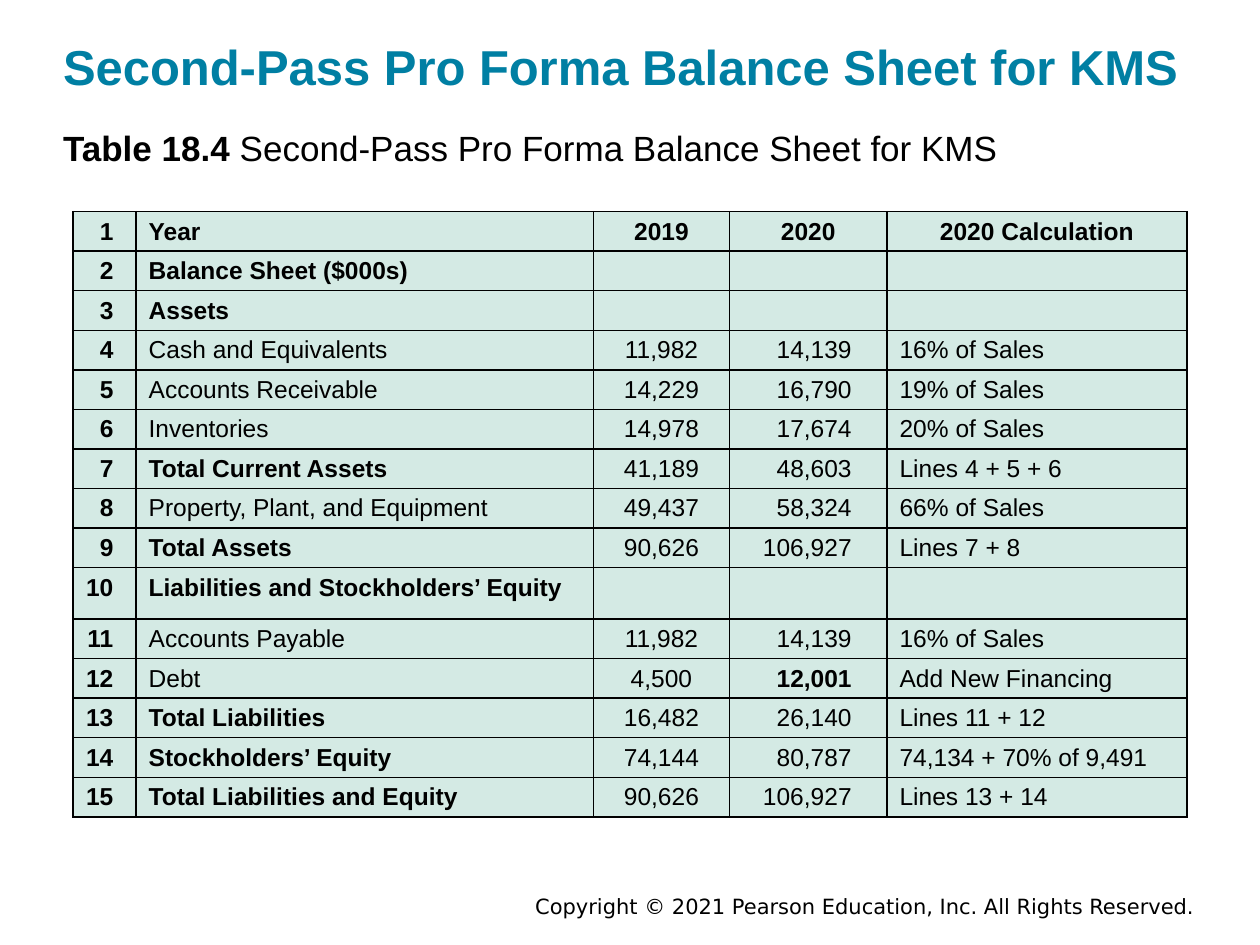
from lxml import etree
from pptx import Presentation
from pptx.dml.color import RGBColor
from pptx.enum.text import MSO_ANCHOR, PP_ALIGN
from pptx.oxml.ns import qn
from pptx.util import Inches, Pt

LEFT, MID, RIGHT = PP_ALIGN.LEFT, PP_ALIGN.CENTER, PP_ALIGN.RIGHT
MIDDLE, TOP = MSO_ANCHOR.MIDDLE, MSO_ANCHOR.TOP
HUES = {"title": "007FA3", "text": "000000", "cell": "D4EAE4", "line": "000000"}


def style(para, size, bold=False, hue="text", align=LEFT, face="Arial"):
    para.alignment = align
    font = para.font
    font.name, font.size, font.bold = face, Pt(size), bold
    font.color.rgb = RGBColor.from_string(HUES[hue])


def place(shape, left, top, width, height, anchor):
    shape.left, shape.top = Inches(left), Inches(top)
    shape.width, shape.height = Inches(width), Inches(height)
    frame = shape.text_frame
    frame.margin_left = frame.margin_right = 0
    frame.margin_top = frame.margin_bottom = 0
    frame.vertical_anchor = anchor
    frame.word_wrap = True
    return frame.paragraphs[0]


prs = Presentation()
prs.slide_width, prs.slide_height = Inches(10), Inches(7.5)
slide = prs.slides.add_slide(prs.slide_layouts[1])
title, body = slide.placeholders

# Title
para = place(title, 0.5, 0.27, 9, 0.51, MIDDLE)
para.text = "Second-Pass Pro Forma Balance Sheet for KMS"
style(para, 28, True, "title")

# Caption
para = place(body, 0.5, 1, 9, 0.42, TOP)
props = para._p.get_or_add_pPr()
props.set("marL", "0")
props.set("indent", "0")
etree.SubElement(props, qn("a:buNone"))
style(para, 20)
para.space_before = Pt(0)
run = para.add_run()
run.text = "Table 18.4 "
run.font.bold = True
para.add_run().text = "Second-Pass Pro Forma Balance Sheet for KMS"

# Balance sheet: label, 2019, 2020, calculation
rows = [
    ("Year", "2019", "2020", "2020 Calculation"),
    ("Balance Sheet ($000s)", "", "", ""),
    ("Assets", "", "", ""),
    ("Cash and Equivalents", "11,982", "14,139", "16% of Sales"),
    ("Accounts Receivable", "14,229", "16,790", "19% of Sales"),
    ("Inventories", "14,978", "17,674", "20% of Sales"),
    ("Total Current Assets", "41,189", "48,603", "Lines 4 + 5 + 6"),
    ("Property, Plant, and Equipment", "49,437", "58,324", "66% of Sales"),
    ("Total Assets", "90,626", "106,927", "Lines 7 + 8"),
    ("Liabilities and Stockholders’ Equity", "", "", ""),
    ("Accounts Payable", "11,982", "14,139", "16% of Sales"),
    ("Debt", "4,500", "12,001", "Add New Financing"),
    ("Total Liabilities", "16,482", "26,140", "Lines 11 + 12"),
    ("Stockholders’ Equity", "74,144", "80,787", "74,134 + 70% of 9,491"),
    ("Total Liabilities and Equity", "90,626", "106,927", "Lines 13 + 14"),
]
plain = {4, 5, 6, 8, 11, 12}  # lines with a regular-weight label
widths = [0.5, 3.63, 1.08, 1.25, 2.38]
aligns = [RIGHT, LEFT, MID, RIGHT, LEFT]
pads = [0.18, 0.1, 0.1, 0.28, 0.1]

frame = slide.shapes.add_table(
    len(rows), len(widths), Inches(0.58), Inches(1.68), Inches(8.83), Inches(5.07))
table = frame.table
table.first_row = table.horz_banding = False
for col, width in zip(table.columns, widths):
    col.width = Inches(width)

for num, row in enumerate(rows, 1):
    table.rows[num - 1].height = Inches(0.41 if num == 10 else 0.28)
    for c, text in enumerate((str(num),) + row):
        cell = table.cell(num - 1, c)
        head = num == 1 and c > 1
        cell.margin_left = Inches(0.08 if c == 0 else 0.1)
        cell.margin_right = Inches(0.1 if head else pads[c])
        cell.margin_top, cell.margin_bottom = Inches(0.05), Inches(0.045)

        # Text
        bold = (c == 0 or num == 1 or (c == 1 and num not in plain)
                or (num, c) == (12, 3))
        para = cell.text_frame.paragraphs[0]
        para.text = text
        style(para, 14, bold, align=MID if head else aligns[c])
        if not text:
            etree.SubElement(para._p, qn("a:endParaRPr"), sz="1400")

        # Borders, then fill
        props = cell._tc.get_or_add_tcPr()
        for side in ("lnL", "lnR", "lnT", "lnB"):
            line = etree.SubElement(props, qn("a:" + side), w=str(Pt(1)))
            paint = etree.SubElement(line, qn("a:solidFill"))
            etree.SubElement(paint, qn("a:srgbClr"), val=HUES["line"])
        cell.fill.solid()
        cell.fill.fore_color.rgb = RGBColor.from_string(HUES["cell"])

# Copyright line
note = slide.shapes.add_textbox(Inches(4), Inches(7.04), Inches(5.58), Inches(0.3))
note.text_frame.word_wrap = True
para = note.text_frame.paragraphs[0]
para.text = "Copyright © 2021 Pearson Education, Inc. All Rights Reserved."
style(para, 12, align=RIGHT, face="DejaVu Sans")

prs.save("out.pptx")
